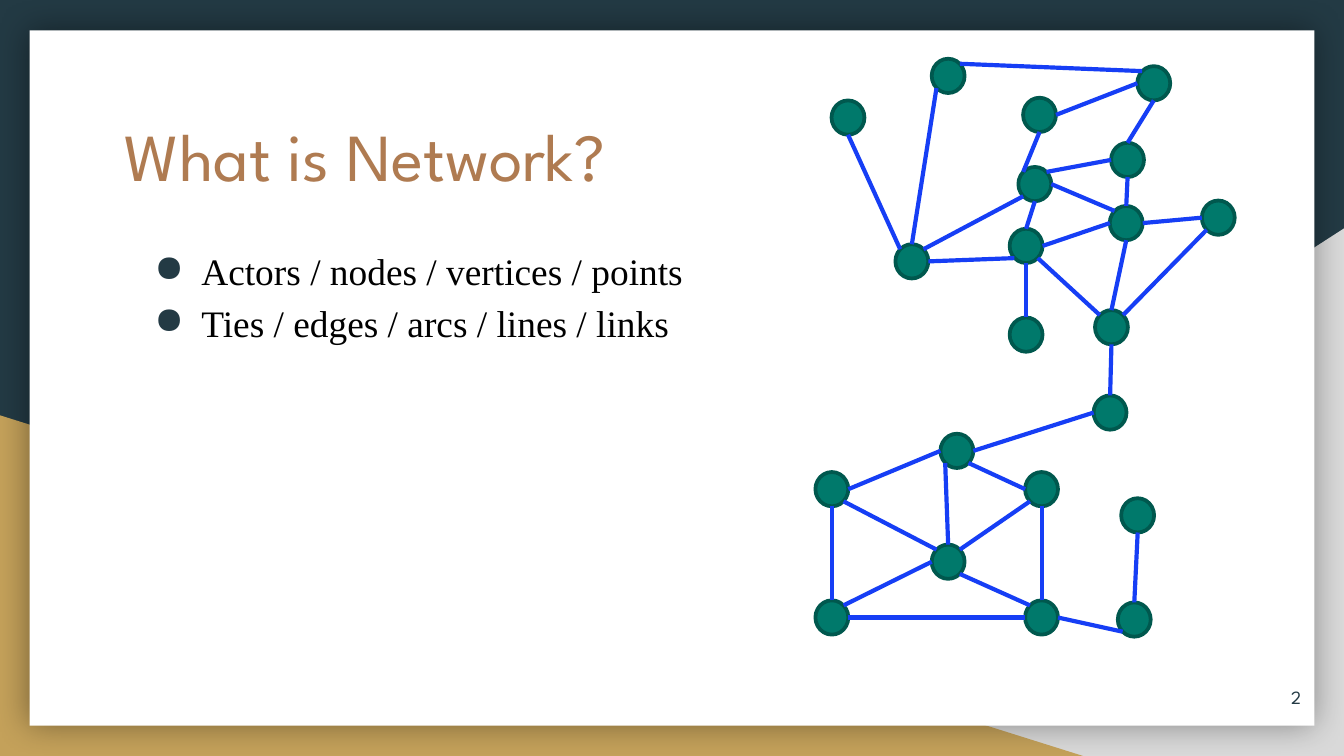
from lxml import etree
from pptx import Presentation
from pptx.dml.color import RGBColor
from pptx.enum.shapes import MSO_CONNECTOR, MSO_SHAPE
from pptx.enum.text import MSO_ANCHOR, PP_ALIGN
from pptx.oxml.ns import qn
from pptx.util import Inches, Pt

STRAIGHT = MSO_CONNECTOR.STRAIGHT
RECTANGLE, TRIANGLE, OVAL = MSO_SHAPE.RECTANGLE, MSO_SHAPE.RIGHT_TRIANGLE, MSO_SHAPE.OVAL
TOP, MIDDLE = MSO_ANCHOR.TOP, MSO_ANCHOR.MIDDLE
LEFT, RIGHT = PP_ALIGN.LEFT, PP_ALIGN.RIGHT

NAVY, GOLD, GREY, WHITE, BLACK = "233A44", "C4A15A", "D9D9D9", "FFFFFF", "000000"
BROWN, TEAL, DARK_TEAL, BLUE = "AF7B51", "00796B", "00584E", "163EF5"
HEADING_FONT, BODY_FONT = "League Spartan", "Times New Roman"

COLUMNS = 100  # square grid cells across the slide
NODE_WIDTH, NODE_HEIGHT = 2.45, 2.55
DIAGONAL = 0.71

# Node centres in grid cells
NODES = {
    "A": (77.35, 8.55), "B": (85.85, 6.2), "C": (77, 13.7), "D": (83.9, 11.9),
    "E": (70.55, 5.65), "F": (76.35, 18.3), "G": (67.85, 19.45), "H": (76.35, 24.9),
    "I": (83.8, 16.6), "J": (90.65, 16.2), "K": (82.7, 24.35), "L": (63.1, 8.75),
    "M": (82.6, 30.7), "N": (71.2, 33.55), "O": (70.55, 41.8), "P": (61.9, 36.4),
    "Q": (77.5, 36.4), "R": (61.9, 45.95), "S": (77.5, 45.95), "T": (84.65, 38.35),
    "U": (84.4, 46.1),
}

# Each tie: node and compass point at both ends
TIES = """
A-e B-w, A-s C-nw, C-ne D-w, D-n B-s, C-s F-n, E-sw G-n, G-e F-sw, H-n F-s,
I-e J-w, I-s K-n, K-ne J-sw, D-s I-n, L-s G-nw, P-se O-nw, O-ne Q-sw, P-e N-w,
P-s R-n, R-e S-w, S-n Q-s, E-ne B-nw, R-ne O-w, O-se S-nw, N-sw O-n, N-e M-w,
K-s M-n, F-se K-nw, F-e I-w, U-n T-s, S-e U-sw, C-sw G-ne, C-e I-nw, Q-w N-se
"""


def color(value):
    return RGBColor.from_string(value)


def tie_end(label):
    """Grid position of a compass point on the rim of a node."""
    node, compass = label.split("-")
    x, y = NODES[node]
    reach = DIAGONAL if len(compass) == 2 else 1
    across = ("e" in compass) - ("w" in compass)
    down = ("s" in compass) - ("n" in compass)
    return x + across * reach * NODE_WIDTH / 2, y + down * reach * NODE_HEIGHT / 2


class Deck:
    def __init__(self):
        self.presentation = Presentation()
        self.presentation.slide_width = Inches(10)
        self.presentation.slide_height = Inches(5.625)
        self.cell = self.presentation.slide_width / COLUMNS
        self.slide = self.presentation.slides.add_slide(self.presentation.slide_layouts[6])

    def grid(self, *cells):
        return [round(count * self.cell) for count in cells]

    def background(self, fill):
        self.slide.background.fill.solid()
        self.slide.background.fill.fore_color.rgb = color(fill)

    def shape(self, kind, box, fill, line=None):
        shape = self.slide.shapes.add_shape(kind, *self.grid(*box))
        shape.shadow.inherit = False
        shape.fill.solid()
        shape.fill.fore_color.rgb = color(fill)
        if line:
            shape.line.color.rgb = color(line)
            shape.line.width = Pt(2)
        else:
            shape.line.fill.background()
        return shape

    def soft_shadow(self, shape, blur, opacity):
        effects = shape._element.spPr.find(qn("a:effectLst"))
        shadow = etree.SubElement(effects, qn("a:outerShdw"), blurRad=str(Pt(blur)), dist="0",
                                  algn="ctr", rotWithShape="0")
        shade = etree.SubElement(shadow, qn("a:srgbClr"), val=BLACK)
        etree.SubElement(shade, qn("a:alpha"), val=str(opacity * 1000))

    def text(self, box, lines, size, font, ink, anchor=TOP, align=LEFT, bullet=None):
        shape = self.slide.shapes.add_textbox(*self.grid(*box))
        frame = shape.text_frame
        frame.word_wrap = True
        frame.vertical_anchor = anchor
        frame.margin_left = frame.margin_right = Inches(0.1)
        frame.margin_top = frame.margin_bottom = Inches(0.1)
        frame.text = "\n".join(lines)
        for paragraph in frame.paragraphs:
            paragraph.alignment = align
            if bullet:
                paragraph.line_spacing = 1.15
                self.bullet(paragraph, bullet)
            for run in paragraph.runs:
                run.font.size = Pt(size)
                run.font.name = font
                run.font.color.rgb = color(ink)

    def bullet(self, paragraph, ink):
        properties = paragraph._p.get_or_add_pPr()
        properties.set("marL", str(Inches(0.5)))
        properties.set("indent", str(Inches(-0.35)))
        bullet_color = etree.SubElement(properties, qn("a:buClr"))
        etree.SubElement(bullet_color, qn("a:srgbClr"), val=ink)
        etree.SubElement(properties, qn("a:buChar"), char="●")

    def node(self, x, y):
        box = (x - NODE_WIDTH / 2, y - NODE_HEIGHT / 2, NODE_WIDTH, NODE_HEIGHT)
        self.shape(OVAL, box, TEAL, DARK_TEAL)

    def tie(self, start, end):
        connector = self.slide.shapes.add_connector(STRAIGHT, *self.grid(*start, *end))
        connector.line.color.rgb = color(BLUE)
        connector.line.width = Pt(2.25)
        etree.SubElement(connector._element.spPr, qn("a:effectLst"))


def main():
    deck = Deck()

    # Backdrop: coloured corners behind a white panel
    deck.background(NAVY)
    corner = deck.shape(TRIANGLE, (39.2, 17, 60.8, 39.25), GREY)
    corner._element.spPr.xfrm.set("flipH", "1")
    deck.shape(TRIANGLE, (0, 30.9, 80.6, 25.35), GOLD)
    panel = deck.shape(RECTANGLE, (2.2, 2.25, 95.6, 51.75), WHITE)
    deck.soft_shadow(panel, blur=18, opacity=40)

    # Title, bullets and slide number
    deck.text((8.3, 7.5, 49.4, 10.4), ["What is Network?"], 36, HEADING_FONT, BROWN)
    deck.text((9, 17, 50, 33.5),
              ["Actors / nodes / vertices / points", "Ties / edges / arcs / lines / links"],
              20, BODY_FONT, BLACK, bullet=NAVY)
    deck.text((91.8, 49.7, 6, 4.3), ["2"], 10, HEADING_FONT, NAVY, MIDDLE, RIGHT)

    # Network diagram
    for centre in NODES.values():
        deck.node(*centre)
    for tie in TIES.split(","):
        start, end = tie.split()
        deck.tie(tie_end(start), tie_end(end))

    deck.presentation.save("out.pptx")


if __name__ == "__main__":
    main()
